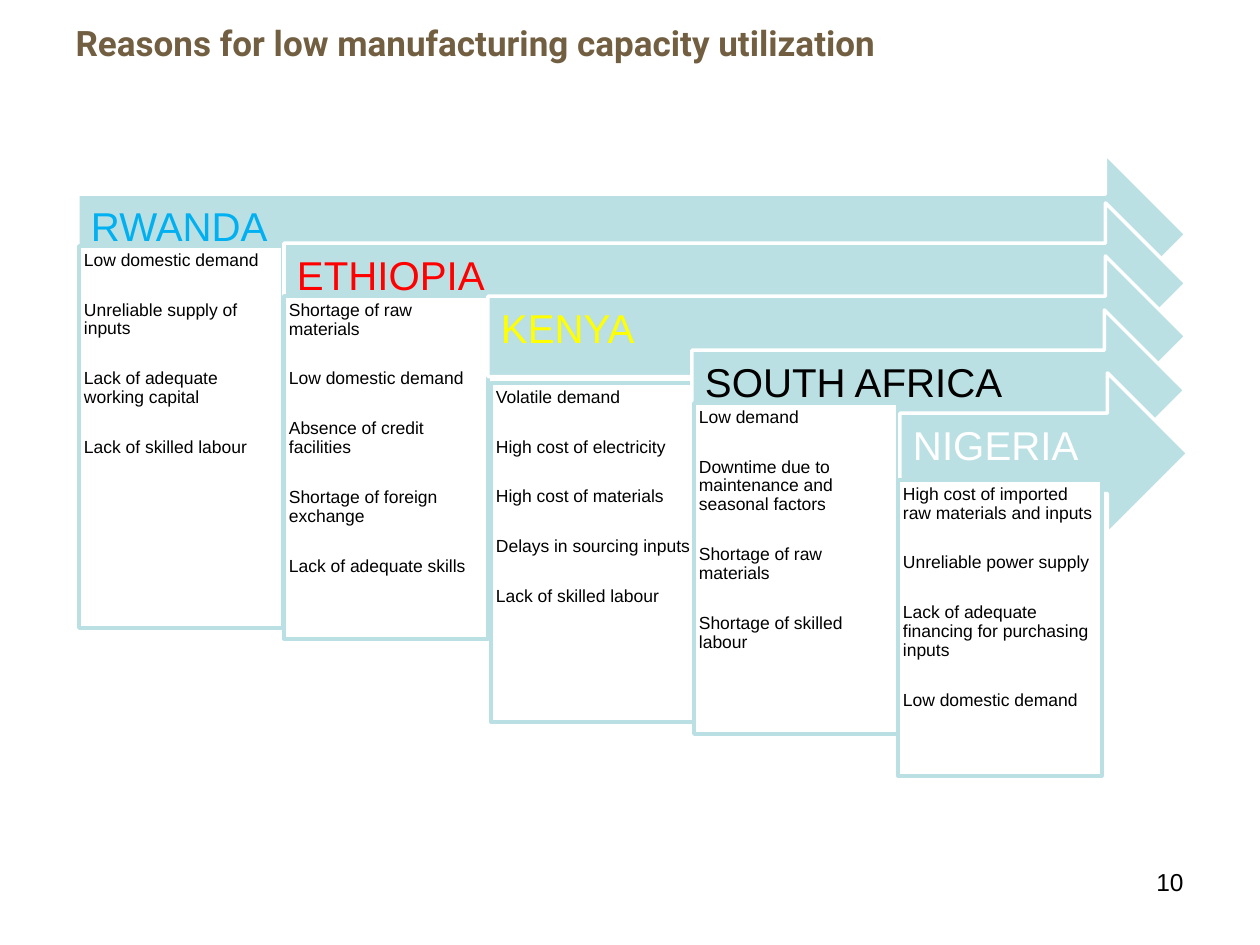
from dataclasses import dataclass

import pptx
import pptx.dml.color
import pptx.enum.shapes
import pptx.enum.text
import pptx.util

RGBColor = pptx.dml.color.RGBColor
Shapes = pptx.enum.shapes.MSO_SHAPE
Anchor = pptx.enum.text.MSO_ANCHOR
Align = pptx.enum.text.PP_ALIGN

PX_PER_INCH = 126
BLACK = RGBColor(0x00, 0x00, 0x00)
WHITE = RGBColor(0xFF, 0xFF, 0xFF)
BROWN = RGBColor(0x72, 0x5F, 0x42)
BLUE = RGBColor(0x00, 0xB0, 0xF0)
RED = RGBColor(0xFF, 0x00, 0x00)
YELLOW = RGBColor(0xFF, 0xFF, 0x00)
PALE_TEAL = RGBColor(0xBB, 0xE0, 0xE3)

ARROW_HEIGHT = 161
PANEL_WIDTH = 204
ARROW_INSETS = (13, 13, 35, 25)
PANEL_INSETS = (5, 5, 5, 5)


@dataclass(frozen=True)
class Box:
    left: int
    top: int
    width: int
    height: int


@dataclass(frozen=True)
class Country:
    name: str
    color: RGBColor
    arrow: Box
    panel: Box
    reasons: tuple[str, ...]


COUNTRIES = (
    Country("RWANDA", BLUE, Box(78, 154, 1108, ARROW_HEIGHT), Box(79, 246, PANEL_WIDTH, 382),
            ("Low domestic demand", "Unreliable supply of inputs",
             "Lack of adequate working capital", "Lack of skilled labour")),
    Country("ETHIOPIA", RED, Box(284, 203, 902, ARROW_HEIGHT), Box(284, 296, PANEL_WIDTH, 343),
            ("Shortage of raw materials", "Low domestic demand",
             "Absence of credit facilities", "Shortage of foreign exchange",
             "Lack of adequate skills")),
    Country("KENYA", YELLOW, Box(488, 256, 698, ARROW_HEIGHT), Box(491, 383, PANEL_WIDTH, 339),
            ("Volatile demand", "High cost of electricity", "High cost of materials",
             "Delays in sourcing inputs", "Lack of skilled labour")),
    Country("SOUTH AFRICA", BLACK, Box(692, 310, 493, ARROW_HEIGHT), Box(694, 403, PANEL_WIDTH, 331),
            ("Low demand", "Downtime due to maintenance and seasonal factors",
             "Shortage of raw materials", "Shortage of skilled labour")),
    Country("NIGERIA", WHITE, Box(900, 373, 288, ARROW_HEIGHT), Box(898, 480, PANEL_WIDTH, 296),
            ("High cost of imported raw materials and inputs", "Unreliable power supply",
             "Lack of adequate financing for purchasing inputs", "Low domestic demand")),
)


def px(length: int) -> pptx.util.Emu:
    return pptx.util.Emu(round(length * 914400 / PX_PER_INCH))


def place(shape, box: Box) -> None:
    shape.left, shape.top = px(box.left), px(box.top)
    shape.width, shape.height = px(box.width), px(box.height)


def add_span(para, text: str, size: int, color: RGBColor,
             typeface: str = "Arial", bold: bool = False) -> None:
    span = para.add_run()
    span.text = text
    span.font.name = typeface
    span.font.size = pptx.util.Pt(size)
    span.font.color.rgb = color
    span.font.bold = bold


def add_block(page, kind, box: Box, fill: RGBColor, outline: RGBColor,
              insets: tuple[int, int, int, int], anchor):
    shape = page.shapes.add_shape(kind, px(box.left), px(box.top), px(box.width), px(box.height))
    shape.shadow.inherit = False
    shape.fill.solid()
    shape.fill.fore_color.rgb = fill
    shape.line.color.rgb = outline
    shape.line.width = pptx.util.Pt(2)
    frame = shape.text_frame
    frame.word_wrap = True
    frame.vertical_anchor = anchor
    frame.margin_left, frame.margin_top, frame.margin_right, frame.margin_bottom = map(px, insets)
    return frame


def write_lines(frame, lines: tuple[str, ...], size: int, color: RGBColor) -> None:
    for index, line in enumerate(lines):
        para = frame.add_paragraph() if index else frame.paragraphs[0]
        para.alignment = Align.LEFT
        para.line_spacing = 0.9
        para.space_before = pptx.util.Pt(17.7 if index else 0)
        add_span(para, line, size, color)


def add_country(page, country: Country) -> None:
    arrow = add_block(page, Shapes.RIGHT_ARROW, country.arrow, PALE_TEAL, WHITE,
                      ARROW_INSETS, Anchor.MIDDLE)
    write_lines(arrow, (country.name,), 23, country.color)
    panel = add_block(page, Shapes.RECTANGLE, country.panel, WHITE, PALE_TEAL,
                      PANEL_INSETS, Anchor.TOP)
    write_lines(panel, country.reasons, 10, BLACK)


def add_title(page, text: str) -> None:
    title = page.shapes.title
    place(title, Box(63, 19, 1134, 47))
    frame = title.text_frame
    frame.auto_size = pptx.enum.text.MSO_AUTO_SIZE.NONE
    frame.vertical_anchor = Anchor.MIDDLE
    para = frame.paragraphs[0]
    para.alignment = Align.LEFT
    add_span(para, text, 20, BROWN, "Roboto", True)


def add_page_number(page, number: str) -> None:
    shape = page.shapes.add_textbox(px(903), px(861), px(293), px(66))
    shape.text_frame.word_wrap = True
    para = shape.text_frame.paragraphs[0]
    para.alignment = Align.RIGHT
    add_span(para, number, 14, BLACK)


def main() -> None:
    deck = pptx.Presentation()
    deck.slide_width, deck.slide_height = px(1260), px(945)
    page = deck.slides.add_slide(deck.slide_layouts[5])
    add_title(page, "Reasons for low manufacturing capacity utilization")
    add_page_number(page, "10")
    for country in COUNTRIES:
        add_country(page, country)
    deck.save("out.pptx")


if __name__ == "__main__":
    main()
